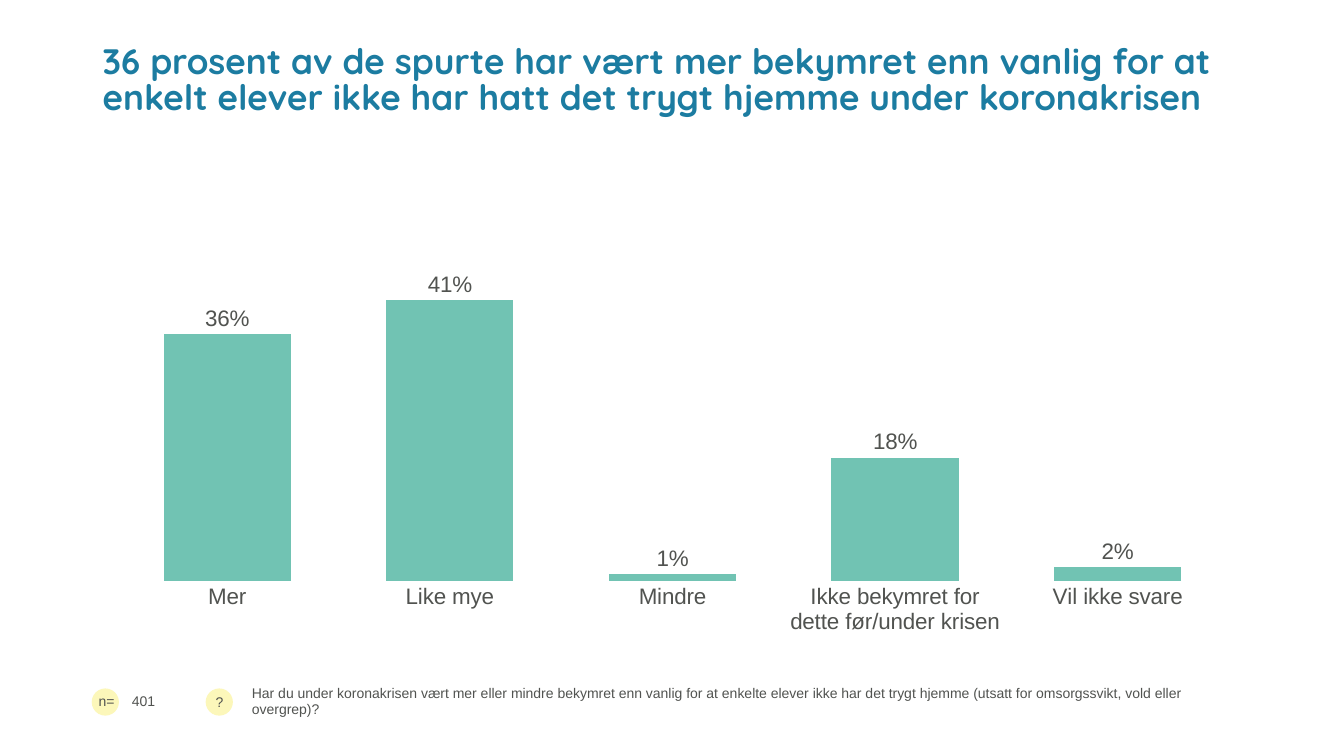
"""Build the survey slide about worry for pupils' safety at home."""
from lxml import etree
from pptx import Presentation
from pptx.chart.data import CategoryChartData
from pptx.dml.color import RGBColor
from pptx.enum.chart import XL_CHART_TYPE, XL_LABEL_POSITION, XL_TICK_MARK
from pptx.enum.shapes import MSO_SHAPE
from pptx.enum.text import MSO_ANCHOR
from pptx.util import Inches, Pt

COLUMNS = XL_CHART_TYPE.COLUMN_CLUSTERED
OUTSIDE = XL_LABEL_POSITION.OUTSIDE_END
NO_TICK = XL_TICK_MARK.NONE
OVAL = MSO_SHAPE.OVAL
TOP, MIDDLE = MSO_ANCHOR.TOP, MSO_ANCHOR.MIDDLE

COLORS = {"title": "1C7CA1", "text": "515350", "bar": "71C3B3", "badge": "FCF7BA"}
TITLE = ("36 prosent av de spurte har vært mer bekymret enn vanlig for at "
         "enkelt elever ikke har hatt det trygt hjemme under koronakrisen")
QUESTION = ("Har du under koronakrisen vært mer eller mindre bekymret enn vanlig for at "
            "enkelte elever ikke har det trygt hjemme (utsatt for omsorgssvikt, vold eller overgrep)?")
ANSWERS = {
    "Mer": 0.36,
    "Like mye": 0.41,
    "Mindre": 0.01,
    "Ikke bekymret for dette før/under krisen": 0.18,
    "Vil ikke svare": 0.02,
}
LEFT, WIDTH = 0.92, 11.5
FOOT_TOP, FOOT_HEIGHT = 6.83, 0.27
BADGE_LEFTS = (0.91, 2.04)
FOOT_TEXTS = [
    ("n=", 0.88, 6.82, 0.45, TOP, 1),
    ("?", 2.04, FOOT_TOP, 0.25, TOP, 1),
    ("401", 1.21, FOOT_TOP, 0.74, MIDDLE, 0.9),
    (QUESTION, 2.4, FOOT_TOP, 9.91, MIDDLE, 0.9),
]
PLOT_LAYOUT = {"x": 0.02, "y": 0.014, "w": 0.96, "h": 0.857}


def rgb(name):
    return RGBColor.from_string(COLORS[name])


def style_font(font, size, color="text", name="Arial", bold=False):
    font.size = Pt(size)
    font.name = name
    font.bold = bold
    font.color.rgb = rgb(color)


def add_text(slide, text, left, top, width, height, *, anchor=TOP, spacing=1, size=10, **style):
    box = slide.shapes.add_textbox(Inches(left), Inches(top), Inches(width), Inches(height))
    frame = box.text_frame
    frame.word_wrap = True
    frame.vertical_anchor = anchor
    para = frame.paragraphs[0]
    para.line_spacing = spacing
    span = para.add_run()
    span.text = text
    style_font(span.font, size, **style)


def add_badge(slide, left):
    badge = slide.shapes.add_shape(OVAL, Inches(left), Inches(FOOT_TOP),
                                   Inches(FOOT_HEIGHT), Inches(FOOT_HEIGHT))
    badge.shadow.inherit = False
    badge.fill.solid()
    badge.fill.fore_color.rgb = rgb("badge")
    badge.line.fill.background()


def place_plot(chart):
    plot_area = chart.plots[0]._element.getparent()
    namespace = etree.QName(plot_area).namespace
    for old in plot_area.findall(f"{{{namespace}}}layout"):
        plot_area.remove(old)
    layout = etree.Element(f"{{{namespace}}}layout")
    manual = etree.SubElement(layout, f"{{{namespace}}}manualLayout")
    settings = {"layoutTarget": "inner", "xMode": "edge", "yMode": "edge", **PLOT_LAYOUT}
    for tag, value in settings.items():
        etree.SubElement(manual, f"{{{namespace}}}{tag}").set("val", str(value))
    plot_area.insert(0, layout)


def add_answer_chart(slide):
    data = CategoryChartData(number_format="0%")
    data.categories = list(ANSWERS)
    data.add_series("Series 1", list(ANSWERS.values()))
    chart = slide.shapes.add_chart(COLUMNS, Inches(LEFT), Inches(1.62),
                                   Inches(WIDTH), Inches(4.76), data).chart
    chart.has_legend = False
    chart.has_title = False
    style_font(chart.font, 18)

    category_axis = chart.category_axis
    category_axis.major_tick_mark = NO_TICK
    category_axis.format.line.fill.background()
    style_font(category_axis.tick_labels.font, 16)

    value_axis = chart.value_axis
    value_axis.visible = False
    value_axis.has_major_gridlines = False
    value_axis.minimum_scale = 0
    value_axis.maximum_scale = 0.6
    value_axis.major_unit = 0.2

    plot = chart.plots[0]
    plot.gap_width = 75
    plot.vary_by_categories = False
    bars = plot.series[0]
    bars.format.fill.solid()
    bars.format.fill.fore_color.rgb = rgb("bar")
    labels = bars.data_labels
    labels.show_value = True
    labels.number_format = "0%"
    labels.number_format_is_linked = False
    labels.position = OUTSIDE
    style_font(labels.font, 16)
    place_plot(chart)


def main():
    deck = Presentation()
    deck.slide_width, deck.slide_height = Inches(13.33), Inches(7.5)
    slide = deck.slides.add_slide(deck.slide_layouts[6])
    for left in BADGE_LEFTS:
        add_badge(slide, left)
    add_text(slide, TITLE, LEFT, 0.4, WIDTH, 1.08, spacing=0.86, size=25.2,
             color="title", name="Quicksand", bold=True)
    add_answer_chart(slide)
    for text, left, top, width, anchor, spacing in FOOT_TEXTS:
        add_text(slide, text, left, top, width, FOOT_HEIGHT, anchor=anchor, spacing=spacing)
    deck.save("out.pptx")


if __name__ == "__main__":
    main()
